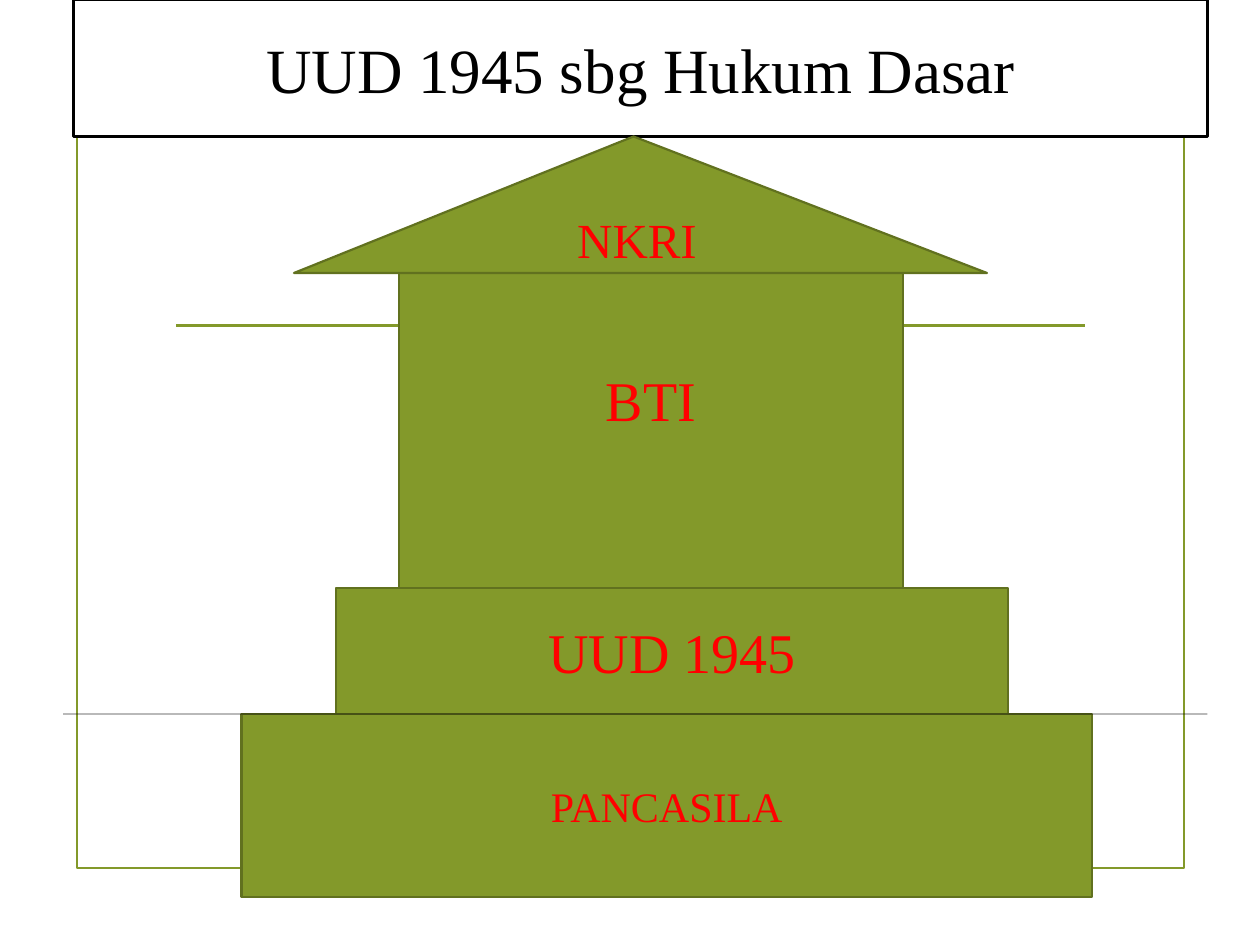
import pptx
import pptx.util
import pptx.dml.color
import pptx.enum.shapes
import pptx.enum.text
import pptx.oxml
import pptx.oxml.ns
from dataclasses import dataclass
from lxml import etree

SHAPE = pptx.enum.shapes.MSO_SHAPE
UNIT = pptx.util.Inches(1 / 12)  # grid of 120 columns by 90 rows
COLS, ROWS = 120, 90


@dataclass(frozen=True)
class Theme:
    font: str = "Times New Roman"
    paper: str = "FFFFFF"
    ink: str = "000000"
    olive: str = "83992A"
    olive_dark: str = "61711F"
    label: str = "FF0000"
    title_size: int = 36
    wall_size: int = 32
    roof_size: int = 28
    base_size: int = 24
    line: float = 1.25
    thin: float = 0.75


T = Theme()


def rgb(value):
    return pptx.dml.color.RGBColor.from_string(value)


def grid(*values):
    return [int(v * UNIT) for v in values]


def inside(box, x, y, w, h):
    return box[0] + x, box[1] + y, w, h


def place(sp, box):
    sp.left, sp.top, sp.width, sp.height = grid(*box)


def outline(sp, color, width=T.line):
    sp.line.color.rgb = rgb(color)
    sp.line.width = pptx.util.Pt(width)


def paint(sp, fill, line):
    sp.fill.solid()
    sp.fill.fore_color.rgb = rgb(fill)
    outline(sp, line)


def write(sp, text, size, color):
    tf = sp.text_frame
    tf.word_wrap = True
    tf.auto_size = pptx.enum.text.MSO_AUTO_SIZE.NONE
    tf.vertical_anchor = pptx.enum.text.MSO_ANCHOR.MIDDLE
    p = tf.paragraphs[0]
    p.alignment = pptx.enum.text.PP_ALIGN.CENTER
    p.space_before = pptx.util.Pt(0)
    r = p.add_run()
    r.text = text
    r.font.name = T.font
    r.font.size = pptx.util.Pt(size)
    r.font.color.rgb = rgb(color)
    return p


def add_block(s, kind, box):
    sp = s.shapes.add_shape(kind, *grid(*box))
    sp.shadow.inherit = False
    return sp


def add_rule(s, x1, x2, y, color, width):
    rule = s.shapes.add_connector(
        pptx.enum.shapes.MSO_CONNECTOR.STRAIGHT, *grid(x1, y, x2, y))
    outline(rule, color, width)
    etree.SubElement(rule._element.spPr, pptx.oxml.ns.qn("a:effectLst"))
    return rule


def bring_forward(s, sp):
    s.shapes._spTree.append(sp._element)


def backdrop(s, box):
    # Frame with a rule across it
    frame = add_block(s, SHAPE.RECTANGLE, box)
    frame.fill.background()
    outline(frame, T.olive)
    x, y, w, _ = box
    add_rule(s, x + 9.5, x + w - 9.5, y + 23.9, T.olive, T.line)


def heading(s, box):
    title = s.shapes.title
    bring_forward(s, title)
    place(title, box)
    paint(title, T.paper, T.ink)
    write(title, "UUD 1945 sbg Hukum Dasar", T.title_size, T.ink)


def house(s, box):
    # Foundation in the body placeholder
    base = s.placeholders[1]
    bring_forward(s, base)
    place(base, inside(box, 0, 55, 81, 17.4))
    paint(base, T.olive, T.olive_dark)
    p = write(base, "PANCASILA", T.base_size, T.label)
    pPr = p._p.get_or_add_pPr()
    pPr.set("marL", "0")
    pPr.set("indent", "0")
    etree.SubElement(pPr, pptx.oxml.ns.qn("a:buNone"))

    # Storeys from the plinth up to the roof
    storeys = [
        ("UUD 1945", SHAPE.RECTANGLE, (9, 43, 64, 12), T.wall_size),
        ("BTI", SHAPE.RECTANGLE, (15, 13, 48, 30), T.wall_size),
        ("NKRI", SHAPE.ISOSCELES_TRIANGLE, (5, 0, 66, 13), T.roof_size),
    ]
    blocks = {}
    for text, kind, part, size in storeys:
        sp = blocks[text] = add_block(s, kind, inside(box, *part))
        paint(sp, T.olive, T.olive_dark)
        write(sp, text, size, T.label)
    blocks["BTI"].text_frame.margin_bottom = pptx.util.Inches(0.55)
    blocks["NKRI"].adjustments[0] = 0.49

    # Translucent ground line
    x, y, w, _ = box
    ground = add_rule(s, x - 17, x + w + 11, y + 55, T.ink, T.thin)
    color = ground._element.spPr.find(".//" + pptx.oxml.ns.qn("a:srgbClr"))
    etree.SubElement(color, pptx.oxml.ns.qn("a:alpha"), val="42000")


def main():
    prs = pptx.Presentation()
    prs.slide_width, prs.slide_height = grid(COLS, ROWS)
    s = prs.slides.add_slide(prs.slide_layouts[1])
    backdrop(s, (7.3, 7.1, 105.5, 75.6))
    heading(s, (7, 0, 108, 13))
    house(s, (23, 13, 81, 72.4))
    prs.save("out.pptx")


if __name__ == "__main__":
    main()
